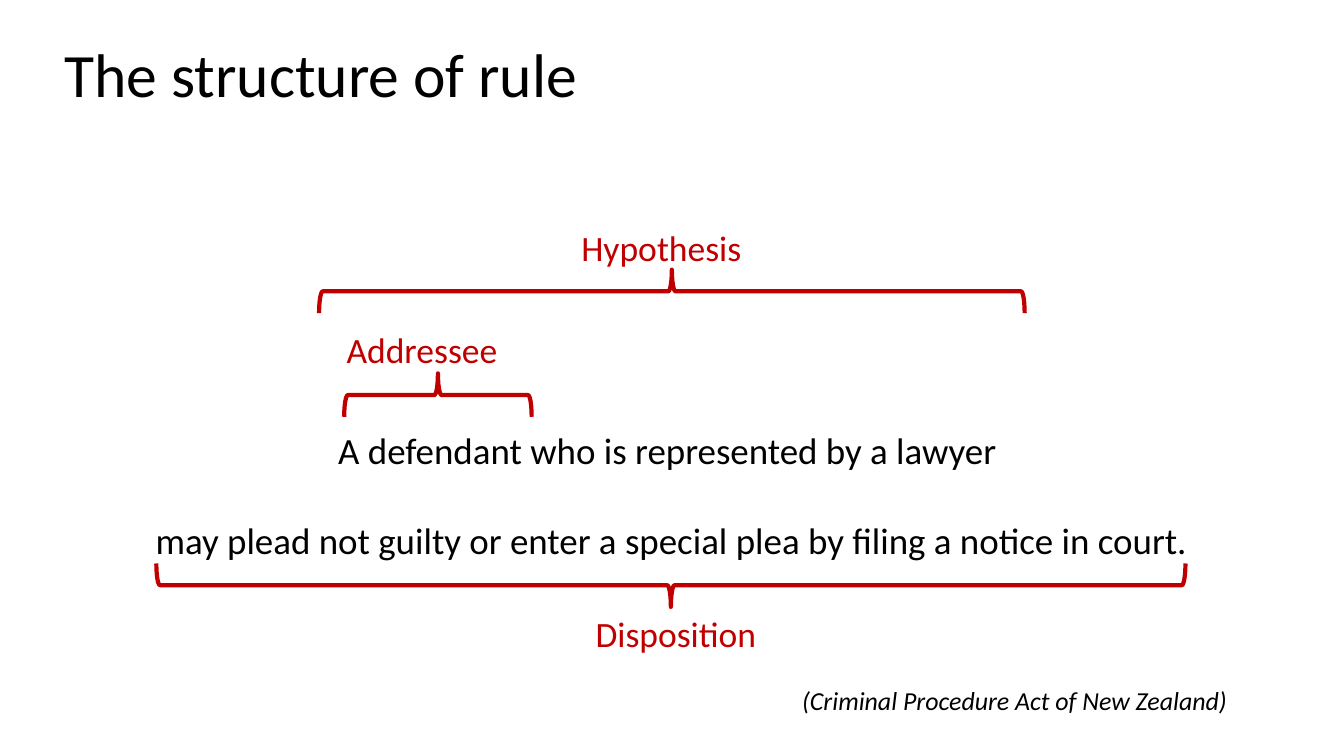
"""Build a slide that marks the parts of a legal rule with braces."""
from pptx import Presentation
from pptx.dml.color import RGBColor
from pptx.enum import shapes, text
from pptx.util import Pt

FONT, BLACK, RED = "Calibri", "000000", "C00000"
TITLE = "The structure of rule"
TITLE_BOX = (38.9, 13.7, 614.9, 84.2)
RULE_BOX = (76.3, 116.4, 807.1, 398)
CENTER, RIGHT = text.PP_ALIGN.CENTER, text.PP_ALIGN.RIGHT

# text, size, italic, alignment, space before
RULE = [
    ("A defendant who is represented by a lawyer ", 26.4, False, CENTER, 0),
    ("may plead not guilty or enter a special plea by filing a notice in court.",
     26.4, False, CENTER, 42),
    ("(Criminal Procedure Act of New Zealand)", 18.5, True, RIGHT, 95),
]

# label, label left, label top, brace centre x, brace centre y, span, rotation
PARTS = [
    ("Addressee", 240.5, 230.4, 312.8, 282.2, 133.9, 90),
    ("Hypothesis", 408.2, 157.7, 479.9, 208.1, 504, 90),
    ("Disposition", 418.3, 433.4, 479.2, 418, 735.1, 270),
]
LABEL_WIDTH, LABEL_HEIGHT, LABEL_SIZE = 144, 38.2, 25.4
BRACE_DEPTH, BRACE_LINE = 31, 3


def color(value):
    return RGBColor.from_string(value)


def apply(target, formats):
    for name, value in formats.items():
        setattr(target, name, value)


def write(paragraph, words, size, ink, italic=False, **formats):
    run = paragraph.add_run()
    run.text = words
    apply(run.font, {"name": FONT, "size": Pt(size), "italic": italic})
    run.font.color.rgb = color(ink)
    apply(paragraph, formats)


def add_text_box(slide, box, **formats):
    frame = slide.shapes.add_textbox(*map(Pt, box)).text_frame
    apply(frame, {"word_wrap": True, **formats})
    return frame


def add_title(slide):
    title = slide.shapes.title
    apply(title, dict(zip(("left", "top", "width", "height"), map(Pt, TITLE_BOX))))
    apply(title.text_frame, {"vertical_anchor": text.MSO_ANCHOR.MIDDLE, "word_wrap": True})
    write(title.text_frame.paragraphs[0], TITLE, 44, BLACK,
          alignment=text.PP_ALIGN.LEFT, line_spacing=0.87)


def add_rule(slide):
    frame = add_text_box(slide, RULE_BOX, vertical_anchor=text.MSO_ANCHOR.BOTTOM)
    for index, (words, size, italic, alignment, gap) in enumerate(RULE):
        paragraph = frame.add_paragraph() if index else frame.paragraphs[0]
        write(paragraph, words, size, BLACK, italic,
              alignment=alignment, line_spacing=0.7, space_before=Pt(gap))


def add_part(slide, label, left, top, center_x, center_y, span, rotation):
    box = (center_x - BRACE_DEPTH / 2, center_y - span / 2, BRACE_DEPTH, span)
    brace = slide.shapes.add_shape(shapes.MSO_SHAPE.LEFT_BRACE, *map(Pt, box))
    brace.rotation = rotation
    brace.shadow.inherit = False
    brace.fill.background()
    brace.line.color.rgb = color(RED)
    brace.line.width = Pt(BRACE_LINE)
    frame = add_text_box(slide, (left, top, LABEL_WIDTH, LABEL_HEIGHT))
    write(frame.paragraphs[0], label, LABEL_SIZE, RED)


def main():
    presentation = Presentation()
    apply(presentation, {"slide_width": Pt(960), "slide_height": Pt(540)})
    slide = presentation.slides.add_slide(presentation.slide_layouts[5])
    add_title(slide)
    add_rule(slide)
    for part in PARTS:
        add_part(slide, *part)
    presentation.save("out.pptx")


if __name__ == "__main__":
    main()
